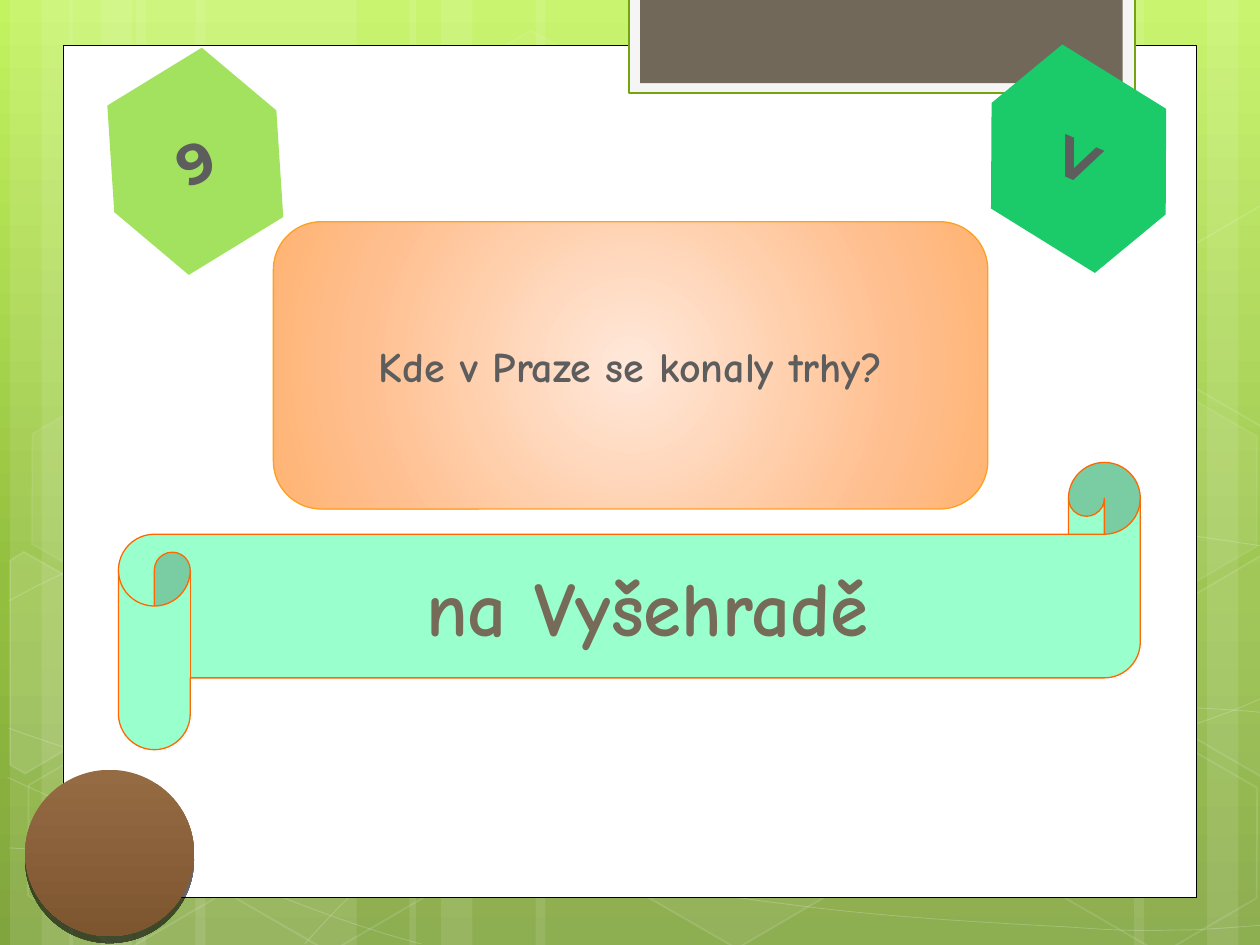
import pptx
import pptx.util
import pptx.dml.color
import pptx.enum.shapes
import pptx.enum.text
import pptx.oxml
import pptx.oxml.ns

KIND = pptx.enum.shapes.MSO_SHAPE
NS = pptx.oxml.ns.nsdecls("a")
WHITE = "FFFFFF"

# Backdrop data, in inches: left and width of the pale stripes
BANDS = [(1.08, 1.75), (0.08, 0.5), (0.33, 0.83), (1.55, 1.75),
         (0.55, 0.5), (0.8, 0.83), (7.33, 1.75), (9.58, 0.5),
         (9, 0.83), (4.25, 3.08), (3.25, 0.5), (3.5, 0.83)]

# Start point, then cubic steps of two control points and an end point
CURVES = [
    [(0.07, 6.73), (0.61, 6.76), (1.15, 6.79), (1.9, 6.78),
     (2.65, 6.77), (3.58, 6.75), (4.58, 6.65), (5.58, 6.55), (7, 6.36),
     (7.92, 6.17), (8.83, 5.98), (9.77, 5.68), (10.07, 5.51)],
    [(0.07, 4.77), (0.36, 4.61), (0.65, 4.46), (1.21, 4.31),
     (1.78, 4.16), (2.59, 3.94), (3.47, 3.87), (4.36, 3.8), (5.44, 3.79),
     (6.54, 3.87), (7.64, 3.95), (9.47, 4.26), (10.07, 4.34)],
    [(0.06, 6.17), (1.27, 6.72), (2.47, 7.27), (3.34, 7.49)],
    [(0.07, 5.78), (0.38, 5.89), (0.7, 6), (1.28, 6.16),
     (1.86, 6.31), (2.73, 6.56), (3.57, 6.73), (4.4, 6.9), (5.45, 7.08),
     (6.28, 7.18), (7.11, 7.29), (8, 7.33), (8.53, 7.36), (9.05, 7.4),
     (9.19, 7.38), (9.45, 7.38), (9.71, 7.37), (9.89, 7.35), (10.07, 7.34)],
    [(2.42, 7.49), (2.6, 7.29), (2.78, 7.09), (3.02, 6.91),
     (3.26, 6.73), (3.6, 6.53), (3.88, 6.39), (4.16, 6.25), (4.33, 6.19),
     (4.7, 6.09), (5.06, 5.99), (5.73, 5.85), (6.08, 5.78), (6.44, 5.71),
     (6.49, 5.71), (6.8, 5.69), (7.11, 5.66), (7.6, 5.63), (7.94, 5.62),
     (8.29, 5.61), (8.86, 5.62), (8.86, 5.62), (9.1, 5.62), (9.3, 5.62),
     (9.53, 5.62), (9.71, 5.63), (9.88, 5.64), (10.06, 5.66)],
]

# Left, top, fill opacity and line opacity of the pale hexagons
CELLS = [(3.34, 0.36, 4, 8), (4.97, 5.89, 6, 12), (0.11, 5.91, 0, 12),
         (0.14, 3.12, 7, 8), (1.74, 5.92, 0, 12), (7.53, 4.53, 10, 12),
         (8.34, 5.93, 0, 12), (8.34, 3.14, 7, 8)]

# Hexagons cut off by the slide edge: points and fill opacity
CUTS = [
    ([(0.08, 4.45), (0.19, 4.38), (0.96, 4.82), (0.95, 5.7),
      (0.2, 6.14), (0.08, 6.07)], 10),
    ([(9.26, 4.85), (10.01, 4.41), (10.09, 4.46), (10.09, 6.13),
      (10.02, 6.17), (9.26, 5.73)], 4),
    ([(9.26, 2.07), (10.01, 1.63), (10.1, 1.68), (10.09, 3.35),
      (10.02, 3.39), (9.26, 2.95)], 0),
]

# Skewed badges: text, centre, turn, colour, three corners (the rest mirror)
BADGES = [
    ("V", (8.56, 1.26), 23.5, "1BCB69",
     [(-0.81, -0.13), (-0.48, -0.78), (0.48, -0.64)]),
    ("9", (1.55, 1.28), 337, "A3E25F",
     [(0.4, -0.81), (0.75, -0.12), (0.47, 0.68)]),
]


def inch(n):
    return pptx.util.Cm(n * 2.54)


def tint(code):
    return pptx.dml.color.RGBColor.from_string(code)


def fade(node, pct):
    """Make the solid colour inside node partly clear."""
    for rgb in node.xpath("./a:solidFill/a:srgbClr"):
        rgb.append(pptx.oxml.parse_xml(f'<a:alpha {NS} val="{pct * 1000}"/>'))


def blend(fill, root, stops, round_=False):
    """Give a gradient, downward or out from the centre."""
    fill.gradient()
    grad = root.xpath(".//a:gradFill")[0]
    for kid in list(grad):
        grad.remove(kid)
    marks = "".join(f'<a:gs pos="{pos * 1000}"><a:srgbClr val="{code}"/></a:gs>'
                    for pos, code in stops)
    way = ('<a:path path="circle"><a:fillToRect l="50000" t="50000" '
           'r="50000" b="50000"/></a:path>' if round_
           else '<a:lin ang="5400000" scaled="0"/>')
    box = pptx.oxml.parse_xml(
        f'<a:gradFill {NS}><a:gsLst>{marks}</a:gsLst>{way}</a:gradFill>')
    for kid in list(box):
        grad.append(kid)


def paint(shape, fill=None, line=None, width=0.75, alpha=100, clear=100):
    """Set flat fill and line; alpha is for the fill, clear for the line."""
    shape.shadow.inherit = False
    if fill and alpha:
        shape.fill.solid()
        shape.fill.fore_color.rgb = tint(fill)
        if alpha < 100:
            fade(shape._element.spPr, alpha)
    else:
        shape.fill.background()
    if line:
        shape.line.color.rgb = tint(line)
        shape.line.width = pptx.util.Pt(width)
        if clear < 100:
            fade(shape._element.spPr.xpath("./a:ln")[0], clear)
    else:
        shape.line.fill.background()


def form(slide, kind, box, turn=0, adj=(), **look):
    shape = slide.shapes.add_shape(kind, *map(inch, box))
    shape.rotation = turn
    for i, val in enumerate(adj):
        shape.adjustments[i] = val
    paint(shape, **look)
    return shape


def trace(slide, points, close=True, **look):
    pen = slide.shapes.build_freeform(*map(inch, points[0]), scale=1.0)
    pen.add_line_segments([tuple(map(inch, p)) for p in points[1:]], close=close)
    shape = pen.convert_to_shape()
    paint(shape, **look)
    return shape


def bend(shape):
    """Turn each three straight steps into one cubic curve."""
    steps = shape._element.xpath(".//a:lnTo")
    for i in range(0, len(steps), 3):
        curve = pptx.oxml.parse_xml(f"<a:cubicBezTo {NS}/>")
        steps[i].addprevious(curve)
        for step in steps[i:i + 3]:
            curve.append(step[0])
            step.getparent().remove(step)


def write(shape, text, size, font="Comic Neue", color="5D5D5D"):
    frame = shape.text_frame
    frame.word_wrap = True
    frame.vertical_anchor = pptx.enum.text.MSO_ANCHOR.MIDDLE
    para = frame.paragraphs[0]
    para.alignment = pptx.enum.text.PP_ALIGN.CENTER
    run = para.add_run()
    run.text = text
    run.font.name = font
    run.font.size = pptx.util.Pt(size)
    run.font.bold = True
    run.font.color.rgb = tint(color)


def backdrop(slide):
    """Draw the decoration and hand it over to the layout."""
    blend(slide.background.fill, slide._element,
          [(0, "C3F35F"), (62, "93BF3F"), (100, "81A53E")])
    for left, wide in BANDS:
        form(slide, KIND.RECTANGLE, (left, 0, wide, 7.5), fill=WHITE, alpha=10)
    for knots in CURVES:
        bend(trace(slide, knots, False, line=WHITE, width=0.5, clear=20))
    for left, top, alpha, clear in CELLS:
        form(slide, KIND.HEXAGON, (left, top, 1.75, 1.52), 30, (0.285, 1.155),
             fill=WHITE, alpha=alpha, line=WHITE, width=1, clear=clear)
    for points, alpha in CUTS:
        trace(slide, points, fill=WHITE, alpha=alpha,
              line=WHITE, width=1, clear=12)
    # White page and the tab at its top
    form(slide, KIND.RECTANGLE, (0.5, 0.36, 9, 6.76),
         fill=WHITE, line="000000", width=0.5)
    form(slide, KIND.RECTANGLE, (4.99, -0.02, 4.02, 0.76),
         fill="F5F5F5", line="74A510", width=1.25)
    form(slide, KIND.RECTANGLE, (5.08, -0.02, 3.83, 0.68), fill="71685A")
    tree = slide.slide_layout.shapes._spTree
    for shape in list(slide.shapes):
        tree.append(shape._element)


def disc(slide):
    shape = form(slide, KIND.OVAL, (0.2, 6.11, 1.34, 1.32))
    blend(shape.fill, shape._element, [(0, "956B43"), (100, "7D552F")])
    glow = shape._element.spPr.xpath("./a:effectLst")[0]
    glow.append(pptx.oxml.parse_xml(
        f'<a:outerShdw {NS} blurRad="0" dist="50800" dir="5400000">'
        '<a:srgbClr val="000000"><a:alpha val="60000"/></a:srgbClr>'
        '</a:outerShdw>'))


def main():
    deck = pptx.Presentation()
    deck.slide_width, deck.slide_height = inch(10), inch(7.5)
    slide = deck.slides.add_slide(deck.slide_layouts[6])
    backdrop(slide)

    # Letter and number badges
    for text, (x, y), turn, color, half in BADGES:
        ring = half + [(-a, -b) for a, b in half]
        badge = trace(slide, [(x + a, y + b) for a, b in ring], fill=color)
        badge.rotation = turn
        write(badge, text, 32, font="Montserrat")

    # Question
    card = form(slide, KIND.ROUNDED_RECTANGLE, (2.17, 1.76, 5.67, 2.28),
                line="FEA022")
    blend(card.fill, card._element,
          [(0, "FFE8DA"), (72, "FFBE8D"), (100, "FFB372")], round_=True)
    write(card, "Kde v Praze se konaly trhy?", 24)

    disc(slide)

    # Answer
    scroll = form(slide, KIND.HORIZONTAL_SCROLL, (0.94, 3.67, 8.11, 2.28),
                  adj=(0.25,), fill="99FFCC", line="FF6700")
    write(scroll, "na Vyšehradě", 44, color="766A59")
    deck.save("out.pptx")


if __name__ == "__main__":
    main()
